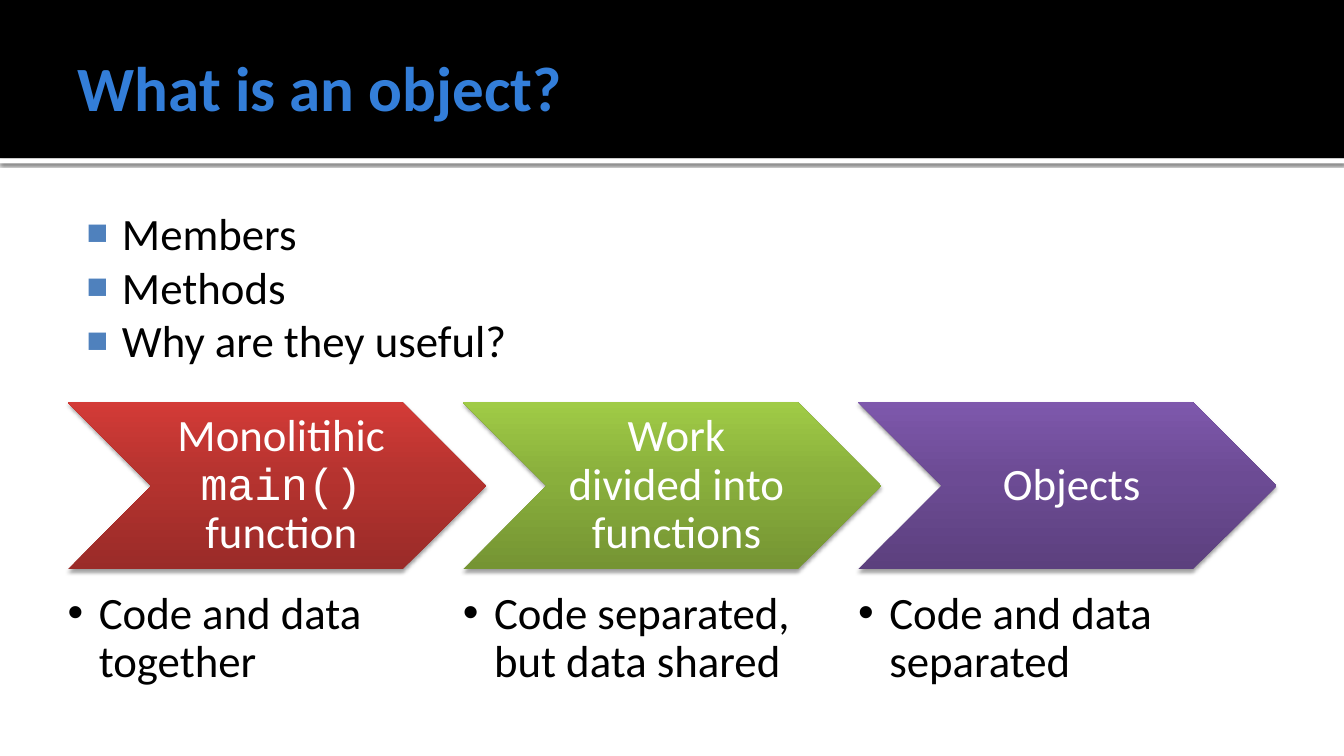
from copy import deepcopy
from dataclasses import dataclass
from typing import Any

from lxml.etree import SubElement
from pptx import Presentation
from pptx.dml.color import RGBColor
from pptx.enum.shapes import MSO_SHAPE
from pptx.enum.text import MSO_ANCHOR, MSO_AUTO_SIZE, PP_ALIGN
from pptx.oxml.ns import qn
from pptx.util import Inches, Pt

COLORS = {
    "black": "000000",
    "white": "FFFFFF",
    "title": "337ED9",
    "bullet": "4F81BD",
}
FONT = "Calibri"
CODE_FONT = "Courier New"
STAGE_LEFT, STAGE_TOP, STAGE_PITCH = 0.67, 3.99, 3.92
CHEVRON_WIDTH, CHEVRON_HEIGHT = 4.15, 1.66


@dataclass(frozen=True)
class Box:
    left: float
    top: float
    width: float
    height: float

    def lengths(self) -> list[int]:
        return [Inches(value) for value in (self.left, self.top, self.width, self.height)]


@dataclass(frozen=True)
class Bullet:
    character: str
    color: str
    percent: int
    indent: float
    hanging: float


@dataclass(frozen=True)
class Shadow:
    opacity: int
    blur: float
    distance: float


@dataclass(frozen=True)
class Stage:
    label: list[tuple[str, str]]
    note: str
    gradient: tuple[str, str, str]


TOPICS = ["Members", "Methods", "Why are they useful?"]
SQUARE = Bullet("■", COLORS["bullet"], 80, 0.48, 0.35)
DOT = Bullet("•", COLORS["black"], 100, 0.31, 0.31)
STRIP_SHADOW = Shadow(60, 2.5, 0.8)
CHEVRON_SHADOW = Shadow(38, 3.1, 2)
STAGES = [
    Stage(
        [("Monolitihic ", FONT), ("main() ", CODE_FONT), ("function", FONT)],
        "Code and data together",
        ("9A2B28", "B5332F", "D33B37"),
    ),
    Stage(
        [("Work divided into functions", FONT)],
        "Code separated, but data shared",
        ("759433", "89AF3C", "A0CB46"),
    ),
    Stage([("Objects", FONT)], "Code and data separated", ("5C407E", "6C4B94", "7E58AC")),
]


def apply(target: Any, values: dict[str, Any]) -> None:
    for name, value in values.items():
        setattr(target, name, value)


def format_frame(shape: Any, insets: tuple[float, ...], anchor: Any = MSO_ANCHOR.TOP) -> None:
    left, top, right, bottom = (Inches(inset) for inset in insets)
    apply(shape.text_frame, {
        "word_wrap": True,
        "auto_size": MSO_AUTO_SIZE.NONE,
        "vertical_anchor": anchor,
        "margin_left": left,
        "margin_top": top,
        "margin_right": right,
        "margin_bottom": bottom,
    })


def add_run(paragraph: Any, text: str, color: str, size: float = 32,
            font: str = FONT, bold: bool = False) -> None:
    run = paragraph.add_run()
    run.text = text
    apply(run.font, {"name": font, "size": Pt(size), "bold": bold})
    run.font.color.rgb = RGBColor.from_string(color)


def add_bullet(paragraph: Any, bullet: Bullet) -> None:
    properties = paragraph._p.get_or_add_pPr()
    properties.set("marL", str(Inches(bullet.indent)))
    properties.set("indent", str(-Inches(bullet.hanging)))
    color = SubElement(properties, qn("a:buClr"))
    SubElement(color, qn("a:srgbClr"), val=bullet.color)
    SubElement(properties, qn("a:buSzPct"), val=str(bullet.percent * 1000))
    SubElement(properties, qn("a:buFont"), typeface="Arial")
    SubElement(properties, qn("a:buChar"), char=bullet.character)


def add_plain_shape(slide: Any, kind: Any, box: Box) -> Any:
    shape = slide.shapes.add_shape(kind, *box.lengths())
    shape.line.fill.background()
    shape.shadow.inherit = False
    return shape


def add_bar(slide: Any, box: Box, color: str) -> Any:
    bar = add_plain_shape(slide, MSO_SHAPE.RECTANGLE, box)
    bar.fill.solid()
    bar.fill.fore_color.rgb = RGBColor.from_string(color)
    return bar


def add_shadow(shape: Any, shadow: Shadow) -> None:
    effects = shape.element.spPr.find(qn("a:effectLst"))
    outer = SubElement(
        effects, qn("a:outerShdw"), blurRad=str(Pt(shadow.blur)),
        dist=str(Pt(shadow.distance)), dir="5400000", rotWithShape="0",
    )
    color = SubElement(outer, qn("a:srgbClr"), val=COLORS["black"])
    SubElement(color, qn("a:alpha"), val=str(shadow.opacity * 1000))


def fill_gradient(shape: Any, colors: tuple[str, str, str]) -> None:
    shape.fill.gradient()
    shape.fill.gradient_angle = 90
    stop_list = shape.element.spPr.find(".//" + qn("a:gsLst"))
    stop_list.insert(1, deepcopy(stop_list[0]))
    for stop, position, color in zip(shape.fill.gradient_stops, (0, 0.55, 1), colors):
        stop.position = position
        stop.color.rgb = RGBColor.from_string(color)


def add_header(slide: Any) -> None:
    strip = add_bar(slide, Box(0, 1.57, 13.33, 0.05), COLORS["white"])
    add_shadow(strip, STRIP_SHADOW)
    banner = add_bar(slide, Box(0, 0, 13.33, 1.57), COLORS["black"])
    title = slide.shapes.title
    banner.element.addnext(title.element)
    position = Box(0.67, 0.17, 12, 1.37).lengths()
    apply(title, dict(zip(("left", "top", "width", "height"), position)))
    format_frame(title, (0.1, 0.05, 0.05, 0.05), MSO_ANCHOR.MIDDLE)
    paragraph = title.text_frame.paragraphs[0]
    paragraph.alignment = PP_ALIGN.LEFT
    add_run(paragraph, "What is an object?", COLORS["title"], 45, bold=True)


def add_topics(slide: Any) -> None:
    body = slide.shapes.add_textbox(*Box(0.67, 1.94, 12, 5.06).lengths())
    format_frame(body, (0.06, 0.1, 0.1, 0.05))
    for index, topic in enumerate(TOPICS):
        frame = body.text_frame
        paragraph = frame.add_paragraph() if index else frame.paragraphs[0]
        add_bullet(paragraph, SQUARE)
        add_run(paragraph, topic, COLORS["black"])


def add_stage(slide: Any, stage: Stage, left: float) -> None:
    chevron_box = Box(left, STAGE_TOP, CHEVRON_WIDTH, CHEVRON_HEIGHT)
    chevron = add_plain_shape(slide, MSO_SHAPE.CHEVRON, chevron_box)
    fill_gradient(chevron, stage.gradient)
    add_shadow(chevron, CHEVRON_SHADOW)

    label_box = Box(left + CHEVRON_HEIGHT / 2, STAGE_TOP, 2.49, CHEVRON_HEIGHT)
    label = slide.shapes.add_textbox(*label_box.lengths())
    format_frame(label, (0.14, 0.05, 0.05, 0.05), MSO_ANCHOR.MIDDLE)
    paragraph = label.text_frame.paragraphs[0]
    apply(paragraph, {"alignment": PP_ALIGN.CENTER, "line_spacing": 0.9})
    for text, font in stage.label:
        add_run(paragraph, text, COLORS["white"], font=font)

    note = slide.shapes.add_textbox(*Box(left, 5.86, 3.32, 0.98).lengths())
    format_frame(note, (0, 0, 0, 0))
    paragraph = note.text_frame.paragraphs[0]
    add_bullet(paragraph, DOT)
    paragraph.line_spacing = 0.9
    add_run(paragraph, stage.note, COLORS["black"])


def main() -> None:
    presentation = Presentation()
    apply(presentation, {"slide_width": Inches(13.33), "slide_height": Inches(7.5)})
    slide = presentation.slides.add_slide(presentation.slide_layouts.get_by_name("Title Only"))
    add_header(slide)
    add_topics(slide)
    for index, stage in enumerate(STAGES):
        add_stage(slide, stage, STAGE_LEFT + index * STAGE_PITCH)
    presentation.save("out.pptx")


if __name__ == "__main__":
    main()
